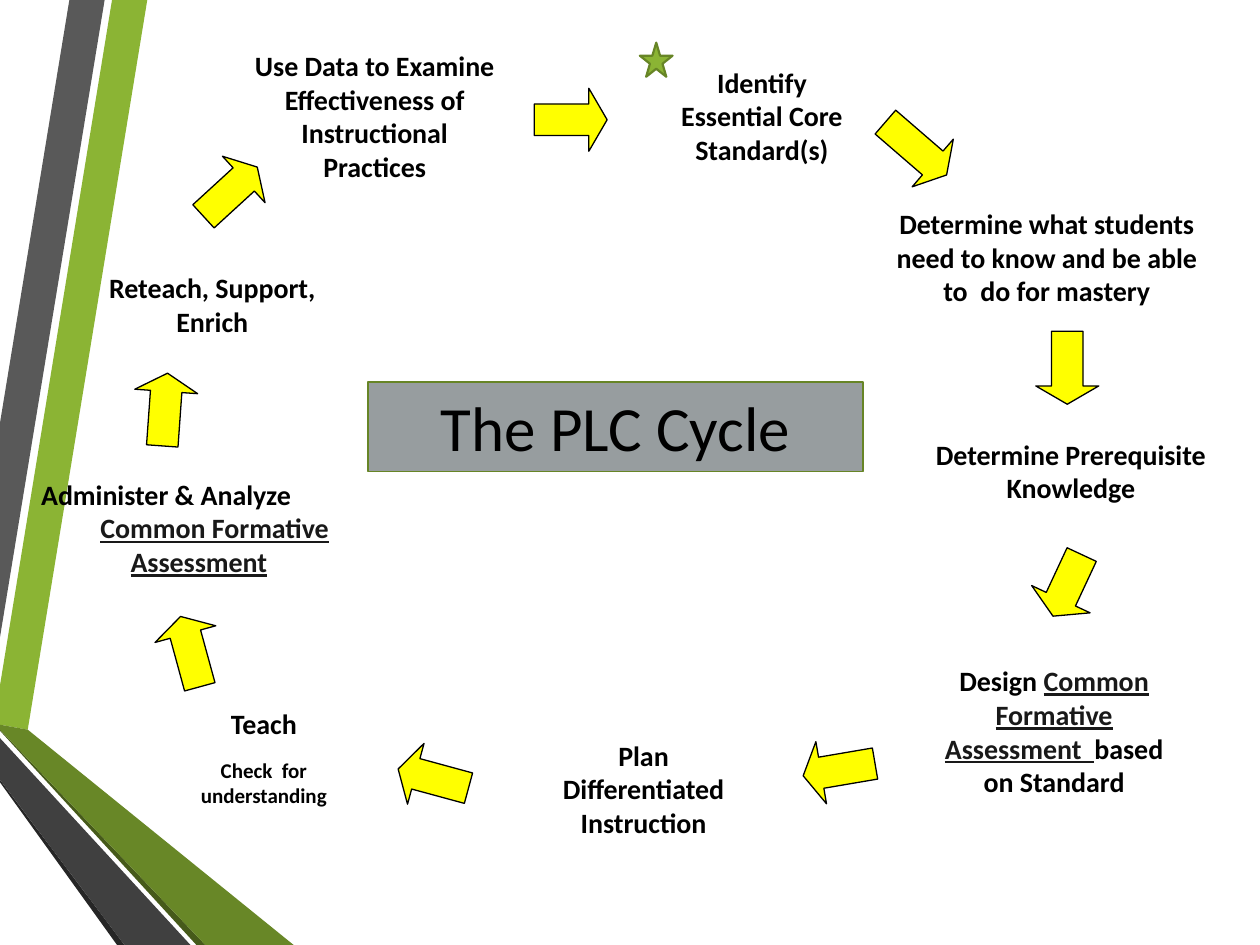
from pptx import Presentation
from pptx.dml.color import RGBColor
from pptx.enum.shapes import MSO_SHAPE
from pptx.enum.text import MSO_AUTO_SIZE, PP_ALIGN
from pptx.util import Cm, Pt

COLORS = {
    "black": "000000", "link": "191919", "yellow": "FFFF00",
    "panel": "979D9F", "green": "8BB434", "outline": "678526",
    "leaf": "688727", "moss": "465A1A", "gray": "595959",
    "charcoal": "404040", "shadow": "262626",
}

BANDS = [
    ("green", [(0, 13.82), (0, 14.61), (0.56, 14.71), (2.97, 0), (2.26, 0)]),
    ("gray", [(2.11, 0), (1.4, 0), (0, 8.53), (0, 12.85)]),
    ("shadow", [(0, 15.72), (0, 15.77), (2.36, 19.05), (2.51, 19.05)]),
    ("moss", [(0, 14.71), (0, 14.73), (3.96, 19.05), (4.14, 19.05)]),
    ("leaf", [(0, 14.71), (4.14, 19.05), (5.92, 19.05), (0.56, 14.71),
              (0, 14.61)]),
    ("charcoal", [(0, 15.72), (2.51, 19.05), (3.84, 19.05), (0, 14.88)]),
]

ARROW_SIZE = (1.47, 1.27)
ARROWS = [
    ((10.77, 1.78), ARROW_SIZE, 0),
    ((17.65, 2.36), (1.63, 1.27), 40.8),
    ((20.78, 6.78), ARROW_SIZE, 90),
    ((20.83, 11.15), (1.37, 1.3), 115),
    ((16.18, 14.88), ARROW_SIZE, 170.3),
    ((8, 15.06), ARROW_SIZE, 195.2),
    ((3.1, 12.5), ARROW_SIZE, 254.7),
    ((2.59, 7.62), ARROW_SIZE, 274.1),
    ((3.91, 3.23), ARROW_SIZE, 317.5),
]

STEP = {"name": "Calibri", "size": Pt(16), "bold": True}
NOTE = {**STEP, "size": Pt(12)}
LINK = {**STEP, "underline": True}
TITLE = {**STEP, "size": Pt(36), "bold": False}

SPACED = {"alignment": PP_ALIGN.CENTER, "space_after": Pt(10)}
TIGHT = {"alignment": PP_ALIGN.CENTER}
LEFT = {"alignment": PP_ALIGN.LEFT}

STEPS = [
    ((13.39, 1.19, 3.94, 2.31),
     [(SPACED, [("Identify Essential Core Standard(s)", STEP)])]),
    ((17.6, 4.04, 7.01, 2.31),
     [(SPACED, [("Determine what students need to know and be able "
                 "to  do for mastery", STEP)])]),
    ((18.39, 8.69, 6.4, 1.63),
     [(TIGHT, [("Determine Prerequisite", STEP)]),
      (TIGHT, [("Knowledge", STEP)])]),
    ((18.52, 13.26, 5.46, 3),
     [(SPACED, [("Design ", STEP), ("Common Formative Assessment  ", LINK),
                ("based on Standard", STEP)])]),
    ((10.97, 14.76, 4.01, 2.21),
     [(SPACED, [("Plan Differentiated Instruction", STEP)])]),
    ((3.2, 14.12, 4.24, 2.31),
     [(SPACED, [("Teach", STEP)]),
      (SPACED, [("Check  for understanding", NOTE)])]),
    ((0.58, 9.5, 6.86, 2.31),
     [(LEFT, [("Administer & Analyze", STEP)]),
      (SPACED, [("Common Formative Assessment", LINK)])]),
    ((1.83, 5.33, 4.9, 1.63),
     [(SPACED, [("Reteach, Support, Enrich", STEP)])]),
    ((4.8, 0.86, 5.51, 3),
     [(SPACED, [("Use Data to Examine Effectiveness of Instructional "
                 "Practices", STEP)])]),
]


def rgb(name):
    return RGBColor.from_string(COLORS[name])


def set_attrs(target, values):
    for name, value in values.items():
        setattr(target, name, value)


def paint(sp, fill, line=None, width=0.75):
    sp.shadow.inherit = False
    sp.fill.solid()
    sp.fill.fore_color.rgb = rgb(fill)
    if line:
        sp.line.color.rgb = rgb(line)
        sp.line.width = Pt(width)
    else:
        sp.line.fill.background()


def write(sp, paragraphs):
    tf = sp.text_frame
    set_attrs(tf, {"word_wrap": True,
                   "auto_size": MSO_AUTO_SIZE.SHAPE_TO_FIT_TEXT})
    for i, (layout, runs) in enumerate(paragraphs):
        p = tf.add_paragraph() if i else tf.paragraphs[0]
        set_attrs(p, layout)
        for text, style in runs:
            r = p.add_run()
            r.text = text
            set_attrs(r.font, style)
            r.font.color.rgb = rgb("link" if style is LINK else "black")


def add_band(s, fill, points):
    corners = [(Cm(x), Cm(y)) for x, y in points]
    builder = s.shapes.build_freeform(*corners[0])
    builder.add_line_segments(corners[1:], close=True)
    paint(builder.convert_to_shape(), fill)


def add_preset(s, kind, box, fill, line, width=0.75):
    sp = s.shapes.add_shape(kind, *map(Cm, box))
    paint(sp, fill, line, width)
    return sp


def add_arrow(s, place, size, angle):
    sp = add_preset(s, MSO_SHAPE.RIGHT_ARROW, place + size, "yellow", "black")
    sp.adjustments[1] = 0.29
    sp.rotation = angle


def add_step(s, box, paragraphs):
    sp = s.shapes.add_textbox(*map(Cm, box))
    write(sp, paragraphs)
    return sp


def indent_first_line(p, length):
    p._p.get_or_add_pPr().set("indent", str(length))


def main():
    prs = Presentation()
    set_attrs(prs, {"slide_width": Cm(25.4), "slide_height": Cm(19.05)})
    s = prs.slides.add_slide(prs.slide_layouts[6])
    for fill, points in BANDS:
        add_band(s, fill, points)
    for place, size, angle in ARROWS:
        add_arrow(s, place, size, angle)
    for box, paragraphs in STEPS:
        sp = add_step(s, box, paragraphs)
        if paragraphs[0][0] is LEFT:
            indent_first_line(sp.text_frame.paragraphs[1], Cm(0.64))
    add_preset(s, MSO_SHAPE.STAR_5_POINT, (12.9, 0.86, 0.66, 0.69),
               "green", "outline", 1.25)
    title = add_preset(s, MSO_SHAPE.RECTANGLE, (7.42, 7.7, 9.98, 1.8),
                       "panel", "outline")
    write(title, [(TIGHT, [("The PLC Cycle", TITLE)])])
    prs.save("out.pptx")


if __name__ == "__main__":
    main()
